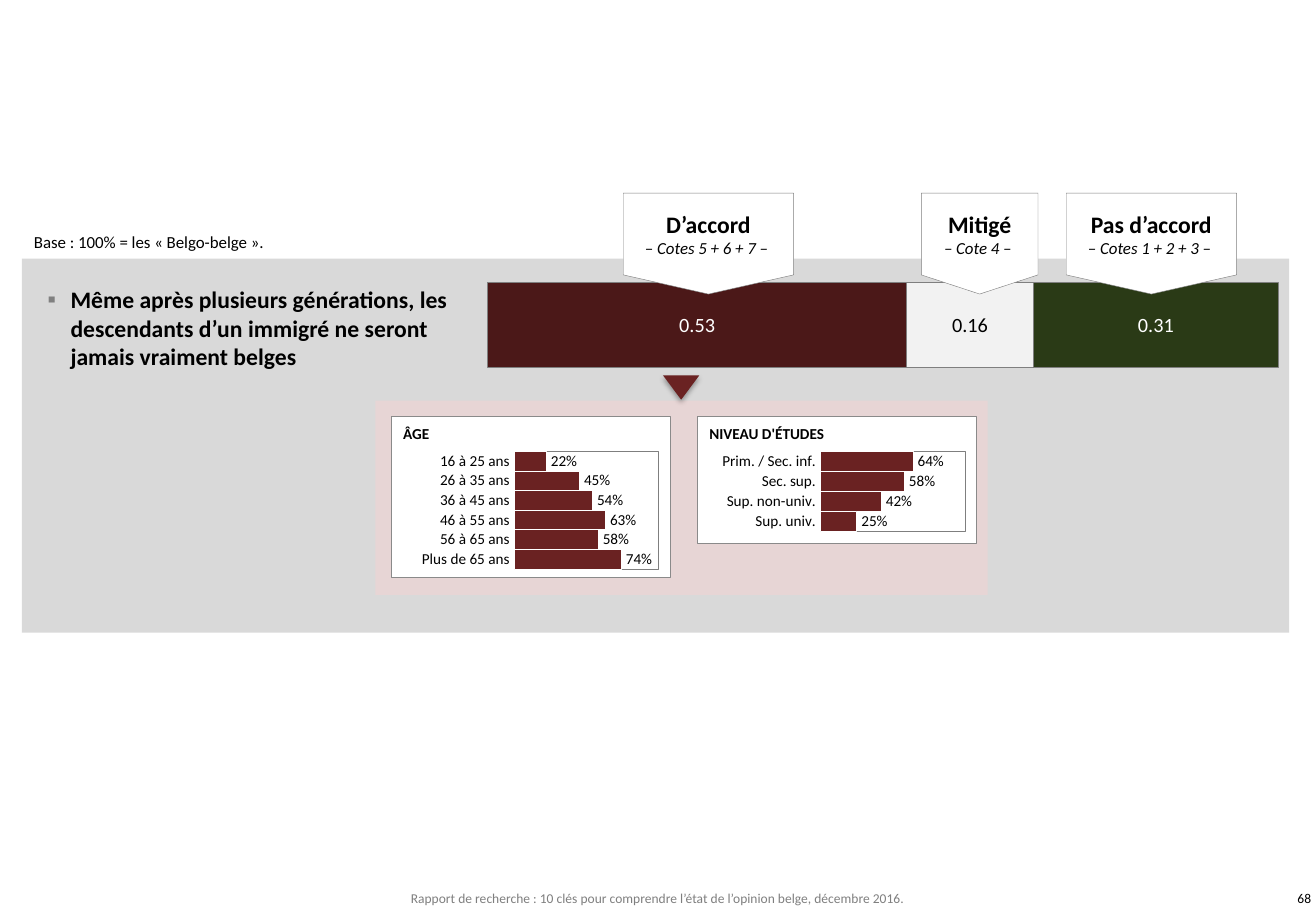
import pptx
import pptx.chart.data
import pptx.dml.color
import pptx.enum.chart
import pptx.enum.shapes
import pptx.enum.text
import pptx.oxml
import pptx.oxml.ns
import pptx.util

Cm = pptx.util.Cm
Pt = pptx.util.Pt
RGBColor = pptx.dml.color.RGBColor
SHAPE = pptx.enum.shapes.MSO_SHAPE
ALIGN = pptx.enum.text.PP_ALIGN
ANCHOR = pptx.enum.text.MSO_ANCHOR
CHART = pptx.enum.chart.XL_CHART_TYPE
LABEL = pptx.enum.chart.XL_LABEL_POSITION
qn = pptx.oxml.ns.qn
nsdecls = pptx.oxml.ns.nsdecls

FONT = "Calibri"
BLACK = RGBColor(0x00, 0x00, 0x00)
WHITE = RGBColor(0xFF, 0xFF, 0xFF)
GREY = RGBColor(0x7F, 0x7F, 0x7F)
CARD_LINE = RGBColor(0x8A, 0x8A, 0x8A)
PANEL = RGBColor(0xD9, 0xD9, 0xD9)
PINK = RGBColor(0xE7, 0xD5, 0xD5)
RED = RGBColor(0x6A, 0x22, 0x22)
DARK_RED = RGBColor(0x4B, 0x18, 0x18)
PALE = RGBColor(0xF2, 0xF2, 0xF2)
DARK_GREEN = RGBColor(0x2A, 0x3A, 0x16)


def add_box(kind, box, fill, line=None):
    sp = slide.shapes.add_shape(kind, *map(Cm, box))
    sp.shadow.inherit = False
    sp.fill.solid()
    sp.fill.fore_color.rgb = fill
    if line is None:
        sp.line.fill.background()
    else:
        sp.line.color.rgb = line
        sp.line.width = Pt(0.25)
    return sp


def add_bars(kind, box, cats, rows, gap, plot_box):
    """Add a bar chart without value axis; plot_box is x, y, w, h as fractions."""
    data = pptx.chart.data.CategoryChartData()
    data.categories = cats
    for i, values in enumerate(rows, 1):
        data.add_series(f"Series {i}", values)
    chart = slide.shapes.add_chart(kind, *map(Cm, box), data).chart
    chart.has_legend = False
    chart.has_title = False
    chart.font.name = FONT
    chart.font.size = Pt(18)
    chart.font.color.rgb = BLACK
    value_axis = chart.value_axis
    value_axis.minimum_scale, value_axis.maximum_scale = 0, 1
    value_axis.has_major_gridlines = False
    value_axis.visible = False
    chart.category_axis.reverse_order = True
    chart.category_axis.format.line.fill.background()
    plot = chart.plots[0]
    plot.gap_width = gap
    plot.vary_by_categories = False

    space = chart._chartSpace
    space.find(qn("c:chart")).addnext(pptx.oxml.parse_xml(
        f'<c:spPr {nsdecls("c", "a")}><a:noFill/><a:ln><a:noFill/></a:ln></c:spPr>'))
    area = space.find(".//" + qn("c:plotArea"))
    for old in area.findall(qn("c:layout")):
        area.remove(old)
    sizes = "".join(f'<c:{k} val="{v}"/>' for k, v in zip("xywh", plot_box))
    area.insert(0, pptx.oxml.parse_xml(
        f'<c:layout {nsdecls("c")}><c:manualLayout><c:layoutTarget val="inner"/>'
        f'<c:xMode val="edge"/><c:yMode val="edge"/>{sizes}</c:manualLayout></c:layout>'))
    return chart


prs = pptx.Presentation()
prs.slide_width, prs.slide_height = Cm(27.51), Cm(19.05)
slide = prs.slides.add_slide(prs.slide_layouts[1])
title, statement = slide.placeholders
title._element.getparent().remove(title._element)

add_box(SHAPE.RECTANGLE, (0.46, 5.41, 26.49, 7.82), PANEL)

# Answers to the statement
chart = add_bars(CHART.BAR_STACKED, (9.77, 5.06, 16.97, 10.44), ["1", "2", "3"],
                 [(v, None, None) for v in (0.53, 0.16, 0.31)], 95, (0.025, 0, 0.975, 1))
chart.category_axis.visible = False
chart.plots[0].overlap = 100
for series, fill, color in zip(chart.plots[0].series, (DARK_RED, PALE, DARK_GREEN),
                               (WHITE, BLACK, WHITE)):
    series.format.fill.solid()
    series.format.fill.fore_color.rgb = fill
    series.format.line.color.rgb = GREY
    series.format.line.width = Pt(0.75)
    labels = series.data_labels
    labels.show_value = True
    labels.position = LABEL.CENTER
    labels.font.name = FONT
    labels.font.size = Pt(12)
    labels.font.color.rgb = color

# The statement stands in front of the panel
slide.shapes._spTree.append(statement._element)
statement.left, statement.top, statement.width, statement.height = map(
    Cm, (0.74, 5.84, 9.53, 2.06))
tf = statement.text_frame
tf.text = "Même après plusieurs générations, les descendants d’un immigré ne seront jamais vraiment belges"
tf.auto_size = pptx.enum.text.MSO_AUTO_SIZE.NONE
p = tf.paragraphs[0]
p.space_before = Pt(0)
r = p.runs[0]
r.font.name, r.font.size, r.font.bold = FONT, Pt(14), True
r.font.color.rgb = BLACK
pPr = p._p.get_or_add_pPr()
pPr.set("marL", str(Cm(0.48)))
pPr.set("indent", str(-Cm(0.48)))
for bullet in ('<a:buClr {}><a:srgbClr val="808080"/></a:buClr>',
               '<a:buFont {} typeface="Calibri"/>', '<a:buChar {} char="▪"/>'):
    pPr.append(pptx.oxml.parse_xml(bullet.format(nsdecls("a"))))

for left, width, heading, scores in [
    (22.29, 3.56, "Pas d’accord", "– Cotes 1 + 2 + 3 – "),
    (19.26, 2.44, "Mitigé", "– Cote 4 – "),
    (13.03, 3.56, "D’accord", "– Cotes 5 + 6 + 7 – "),
]:
    sp = add_box(SHAPE.DOWN_ARROW, (left, 4.04, width, 2.11), WHITE, GREY)
    sp.adjustments[0], sp.adjustments[1] = 1, 0.19
    tf = sp.text_frame
    tf.text = f"{heading}\n{scores}"
    tf.vertical_anchor = ANCHOR.MIDDLE
    for p, size, bold in zip(tf.paragraphs, (14, 10), (True, False)):
        p.alignment = ALIGN.CENTER
        font = p.runs[0].font
        font.name, font.size, font.bold, font.italic = FONT, Pt(size), bold, not bold
        font.color.rgb = BLACK

# Breakdown of those who agree
add_box(SHAPE.RECTANGLE, (7.85, 8.38, 12.8, 4.06), PINK)
pointer = add_box(SHAPE.ISOSCELES_TRIANGLE, (13.86, 7.85, 0.76, 0.51), RED)
spPr = pointer._element.spPr
spPr.xfrm.set("flipV", "1")
spPr.find(qn("a:effectLst")).append(pptx.oxml.parse_xml(
    f'<a:outerShdw {nsdecls("a")} blurRad="{Pt(3.1)}" dist="{Pt(1.8)}" dir="5400000" '
    'rotWithShape="0"><a:srgbClr val="000000"><a:alpha val="35000"/></a:srgbClr></a:outerShdw>'))

for left, card_height, top, height, cats, values in [
    (14.58, 2.65, 9.19, 2.18,
     ["Prim. / Sec. inf.", "Sec. sup.", "Sup. non-univ.", "Sup. univ."],
     (0.64, 0.58, 0.42, 0.25)),
    (8.18, 3.36, 9.07, 3.2,
     ["16 à 25 ans", "26 à 35 ans", "36 à 45 ans", "46 à 55 ans", "56 à 65 ans", "Plus de 65 ans"],
     (0.22, 0.45, 0.54, 0.63, 0.58, 0.74)),
]:
    add_box(SHAPE.RECTANGLE, (left, 8.71, 5.83, card_height), WHITE, CARD_LINE)
    chart = add_bars(CHART.BAR_CLUSTERED, (left - 1.12, top, 7.2, height), cats, [values],
                     0, (0.513, 0.116, 0.419, 0.768))
    axis = chart.category_axis
    axis.major_tick_mark = pptx.enum.chart.XL_TICK_MARK.NONE
    axis.tick_labels.font.size = Pt(9)
    series = chart.plots[0].series[0]
    series.format.fill.solid()
    series.format.fill.fore_color.rgb = RED
    series.format.line.color.rgb = WHITE
    series.format.line.width = Pt(0.25)
    labels = series.data_labels
    labels.show_value = True
    labels.position = LABEL.OUTSIDE_END
    labels.number_format, labels.number_format_is_linked = "0%", False
    labels.font.name = FONT
    labels.font.size = Pt(9)
    labels.font.color.rgb = BLACK
    chart._chartSpace.find(".//" + qn("c:plotArea")).append(pptx.oxml.parse_xml(
        f'<c:spPr {nsdecls("c", "a")}><a:solidFill><a:srgbClr val="FFFFFF"/></a:solidFill>'
        f'<a:ln w="{Pt(0.25)}"><a:solidFill><a:srgbClr val="{GREY}"/></a:solidFill></a:ln></c:spPr>'))

# Captions, footer and page number
for box, text, size, color, bold, align, inset in [
    ((0.46, 4.71, 5.38, 0.69), "Base : 100% = les « Belgo-belge ».", 10, BLACK, False, ALIGN.LEFT, None),
    ((14.58, 8.75, 2.95, 0.64), "NIVEAU D'ÉTUDES", 9, BLACK, True, ALIGN.LEFT, None),
    ((8.18, 8.74, 1.09, 0.64), "ÂGE", 9, BLACK, True, ALIGN.LEFT, None),
    ((0, 18.52, 27.51, 0.53),
     "Rapport de recherche : 10 clés pour comprendre l’état de l’opinion belge, décembre 2016.",
     8, GREY, False, ALIGN.CENTER, 0.1),
    ((21.11, 18.52, 6.4, 0.53), "68", 8, BLACK, False, ALIGN.RIGHT, 0.1),
]:
    tf = slide.shapes.add_textbox(*map(Cm, box)).text_frame
    tf.text = text
    tf.word_wrap = inset is not None
    if inset is not None:
        tf.vertical_anchor = ANCHOR.MIDDLE
        tf.margin_left = tf.margin_right = tf.margin_top = tf.margin_bottom = Cm(inset)
    p = tf.paragraphs[0]
    p.alignment = align
    font = p.runs[0].font
    font.name, font.size, font.bold = FONT, Pt(size), bold
    font.color.rgb = color

prs.save("out.pptx")
